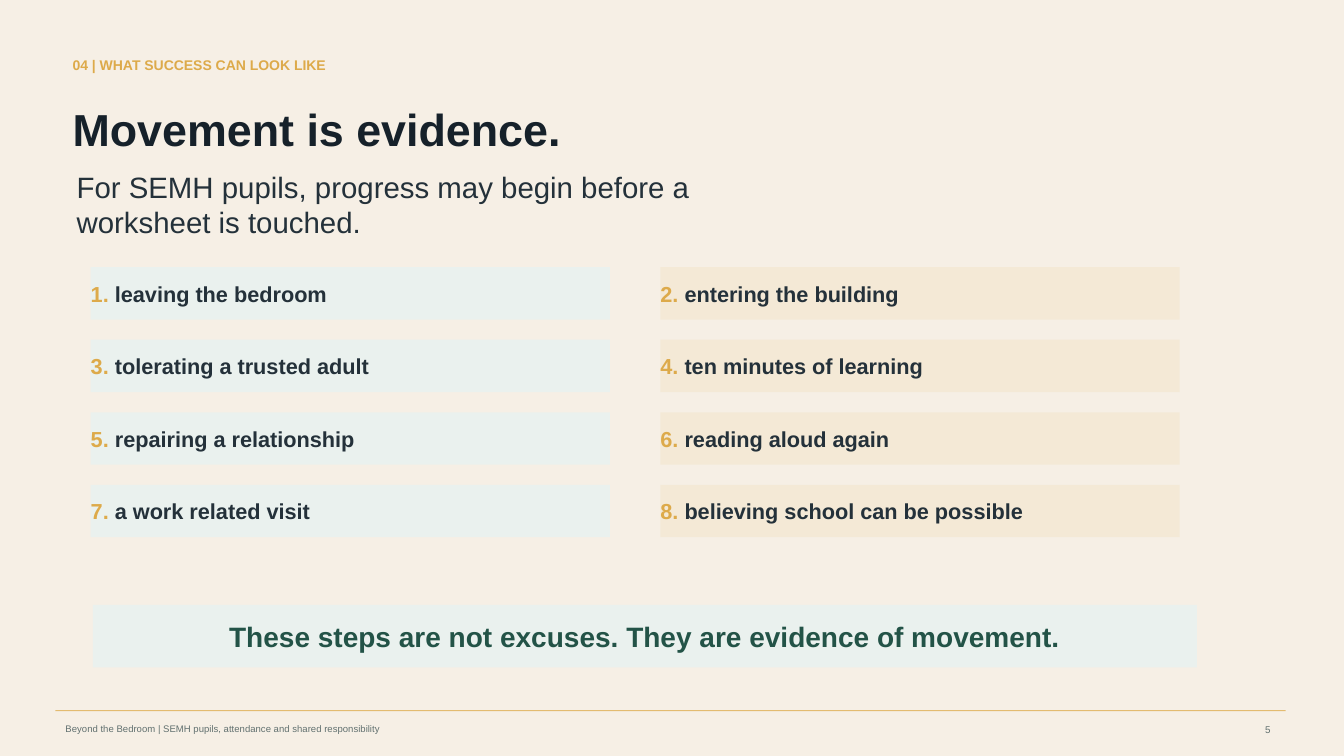
from dataclasses import dataclass

from lxml import etree
from pptx import Presentation
from pptx.dml.color import RGBColor
from pptx.enum.shapes import MSO_CONNECTOR as Connector, MSO_SHAPE as Shape
from pptx.enum.text import MSO_ANCHOR as Anchor, PP_ALIGN as Align
from pptx.oxml.ns import qn
from pptx.util import Inches, Pt


@dataclass(frozen=True)
class Theme:
    font: str = "Arial"
    background: str = "F6EFE5"
    gold: str = "DDAA4A"
    ink: str = "16212A"
    body: str = "24313A"
    muted: str = "61706F"
    green: str = "235347"
    mint: str = "EAF1EE"
    sand: str = "F4E9D6"
    title_size: float = 32
    subtitle_size: float = 21
    message_size: float = 20
    step_size: float = 15.5
    section_size: float = 10
    page_size: float = 7
    footer_size: float = 6.8


STEPS = [
    "leaving the bedroom",
    "entering the building",
    "tolerating a trusted adult",
    "ten minutes of learning",
    "repairing a relationship",
    "reading aloud again",
    "a work related visit",
    "believing school can be possible",
]


class SlideBuilder:
    def __init__(self, slide, theme):
        self.slide = slide
        self.theme = theme
        fill = slide.background.fill
        fill.solid()
        fill.fore_color.rgb = RGBColor.from_string(theme.background)

    def set_text(self, shape, runs, size, bold=False, align=Align.LEFT,
                 anchor=Anchor.MIDDLE, inset=(0, 0)):
        """Fill a shape with one paragraph; runs are (text, color) pairs."""
        frame = shape.text_frame
        frame.word_wrap = True
        frame.vertical_anchor = anchor
        frame.margin_left = frame.margin_right = Inches(inset[0])
        frame.margin_top = frame.margin_bottom = Inches(inset[1])
        paragraph = frame.paragraphs[0]
        paragraph.alignment = align
        for text, color in runs:
            run = paragraph.add_run()
            run.text = text
            run.font.name = self.theme.font
            run.font.size = Pt(size)
            run.font.bold = bold
            run.font.color.rgb = RGBColor.from_string(color)

    def text(self, box, text, color, size, **text_format):
        shape = self.slide.shapes.add_textbox(*map(Inches, box))
        self.set_text(shape, [(text, color)], size, **text_format)

    def panel(self, box, fill, runs, size, **text_format):
        shape = self.slide.shapes.add_shape(Shape.RECTANGLE, *map(Inches, box))
        shape.shadow.inherit = False
        shape.fill.solid()
        shape.fill.fore_color.rgb = RGBColor.from_string(fill)
        shape.line.fill.background()
        self.set_text(shape, runs, size, bold=True, **text_format)

    def rule(self, left, right, top, color, width, opacity):
        """Draw a horizontal line; opacity is a percentage."""
        line = self.slide.shapes.add_connector(
            Connector.STRAIGHT, Inches(left), Inches(top), Inches(right), Inches(top))
        line.line.color.rgb = RGBColor.from_string(color)
        line.line.width = Pt(width)
        properties = line._element.spPr
        color_element = properties.find(".//" + qn("a:srgbClr"))
        etree.SubElement(color_element, qn("a:alpha"), val=str(opacity * 1000))
        etree.SubElement(properties, qn("a:effectLst"))

    def steps(self, steps, left, top, column_pitch, row_pitch):
        """Lay numbered steps out in two columns, row by row."""
        theme = self.theme
        fills = (theme.mint, theme.sand)
        for index, step in enumerate(steps):
            row, column = divmod(index, 2)
            box = (left + column * column_pitch, top + row * row_pitch, 5.15, 0.52)
            runs = [(f"{index + 1}. ", theme.gold), (step, theme.body)]
            self.panel(box, fills[column], runs, theme.step_size)


def main():
    presentation = Presentation()
    presentation.slide_width = Inches(13.33)
    presentation.slide_height = Inches(7.5)
    theme = Theme()
    builder = SlideBuilder(
        presentation.slides.add_slide(presentation.slide_layouts[6]), theme)

    builder.rule(0.55, 12.75, 7.05, theme.gold, width=0.8, opacity=75)
    builder.text((0.65, 7.13, 8, 0.2),
                 "Beyond the Bedroom | SEMH pupils, attendance and shared responsibility",
                 theme.muted, theme.footer_size)
    builder.text((0.72, 0.52, 5.5, 0.25), "04 | WHAT SUCCESS CAN LOOK LIKE",
                 theme.gold, theme.section_size, bold=True)
    builder.text((0.72, 0.85, 5.6, 0.85), "Movement is evidence.",
                 theme.ink, theme.title_size, bold=True)
    builder.text((0.76, 1.75, 6.5, 0.55),
                 "For SEMH pupils, progress may begin before a worksheet is touched.",
                 theme.body, theme.subtitle_size)
    builder.steps(STEPS, left=0.9, top=2.65, column_pitch=5.65, row_pitch=0.72)
    message = "These steps are not excuses. They are evidence of movement."
    builder.panel((0.92, 6, 10.95, 0.62), theme.mint, [(message, theme.green)],
                  theme.message_size, align=Align.CENTER)
    builder.text((12.45, 7.13, 0.87, 0.33), "5", theme.muted, theme.page_size,
                 anchor=Anchor.TOP, inset=(0.1, 0.05))

    presentation.save("out.pptx")


if __name__ == "__main__":
    main()
